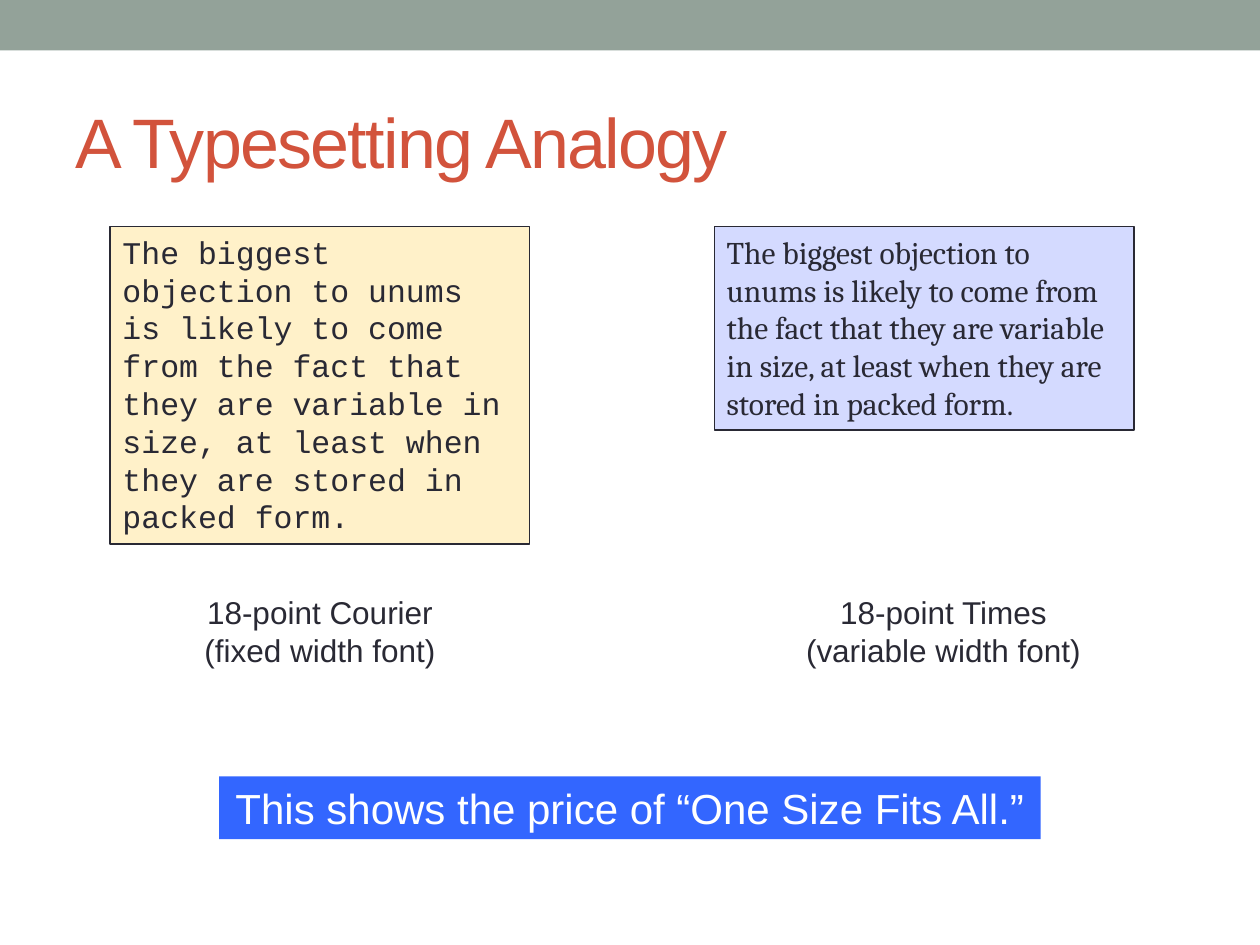
from pptx import Presentation
from pptx import util as u
from pptx.dml.color import RGBColor
from pptx.enum import shapes, text

SAGE = RGBColor(0x93, 0xA2, 0x99)
RUST = RGBColor(0xD2, 0x53, 0x3C)
INK = RGBColor(0x29, 0x29, 0x34)
CREAM = RGBColor(0xFF, 0xF1, 0xC9)
LAVENDER = RGBColor(0xD4, 0xDA, 0xFF)
BLUE = RGBColor(0x33, 0x66, 0xFF)
WHITE = RGBColor(0xFF, 0xFF, 0xFF)

LEFT, CENTER = text.PP_ALIGN.LEFT, text.PP_ALIGN.CENTER
TOP, MIDDLE = text.MSO_ANCHOR.TOP, text.MSO_ANCHOR.MIDDLE

QUOTE = ("The biggest objection to unums is likely to come from the fact that "
         "they are variable in size, at least when they are stored in packed form.")


def write(shape, content, font="Arial", size=18, color=INK, align=LEFT,
          anchor=TOP, wrap=True, leading=None, tracking=None):
    """Fill a shape with text, one paragraph per line of content.

    Leading is in points, tracking in hundredths of a point.
    """
    frame = shape.text_frame
    frame.word_wrap = wrap
    frame.vertical_anchor = anchor
    frame.text = content
    for paragraph in frame.paragraphs:
        paragraph.alignment = align
        if leading:
            paragraph.line_spacing = u.Pt(leading)
        for run in paragraph.runs:
            run.font.name = font
            run.font.size = u.Pt(size)
            run.font.color.rgb = color
            if tracking:
                run.font._element.set("spc", str(tracking))


class SlideBuilder:
    def __init__(self, slide, line_color=INK, line_width=0.75):
        self.slide = slide
        self.line_color = line_color
        self.line_width = line_width

    def box(self, left, top, width, height, fill, outlined=False):
        shape = self.slide.shapes.add_shape(
            shapes.MSO_SHAPE.RECTANGLE,
            u.Cm(left), u.Cm(top), u.Cm(width), u.Cm(height))
        shape.shadow.inherit = False
        shape.fill.solid()
        shape.fill.fore_color.rgb = fill
        if outlined:
            shape.line.color.rgb = self.line_color
            shape.line.width = u.Pt(self.line_width)
        else:
            shape.line.fill.background()
        return shape

    def label(self, left, top, width, height, content, **style):
        shape = self.slide.shapes.add_textbox(
            u.Cm(left), u.Cm(top), u.Cm(width), u.Cm(height))
        write(shape, content, **style)
        return shape

    def sample(self, left, height, fill, font, caption, caption_center):
        """Typeset the quotation in a font, with a caption below."""
        panel = self.box(left, 4.57, 8.46, height, fill, outlined=True)
        write(panel, QUOTE, font=font, leading=21.6)
        width = 6.1
        self.label(caption_center - width / 2, 11.84, width, 1.8, caption,
                   align=CENTER, wrap=False, leading=21.6)


def main():
    presentation = Presentation()
    presentation.slide_width, presentation.slide_height = u.Cm(25.4), u.Cm(19.05)
    slide = presentation.slides.add_slide(presentation.slide_layouts[6])
    builder = SlideBuilder(slide)

    builder.box(0, 0, 25.4, 1.02, SAGE)
    builder.label(1.27, 1.47, 22.86, 2.74, "A Typesetting Analogy",
                  size=40, color=RUST, anchor=MIDDLE, tracking=-100)

    builder.sample(2.22, 6.4, CREAM, "Courier New",
                   "18-point Courier\n(fixed width font)", 6.45)
    builder.sample(14.4, 4.1, LAVENDER, "Cambria",
                   "18-point Times\n(variable width font)", 19.02)

    banner = builder.box(4.42, 15.65, 16.56, 1.27, BLUE)
    write(banner, "This shows the price of “One Size Fits All.”",
          size=24, color=WHITE, align=CENTER, anchor=MIDDLE, wrap=False)

    presentation.save("out.pptx")


if __name__ == "__main__":
    main()
